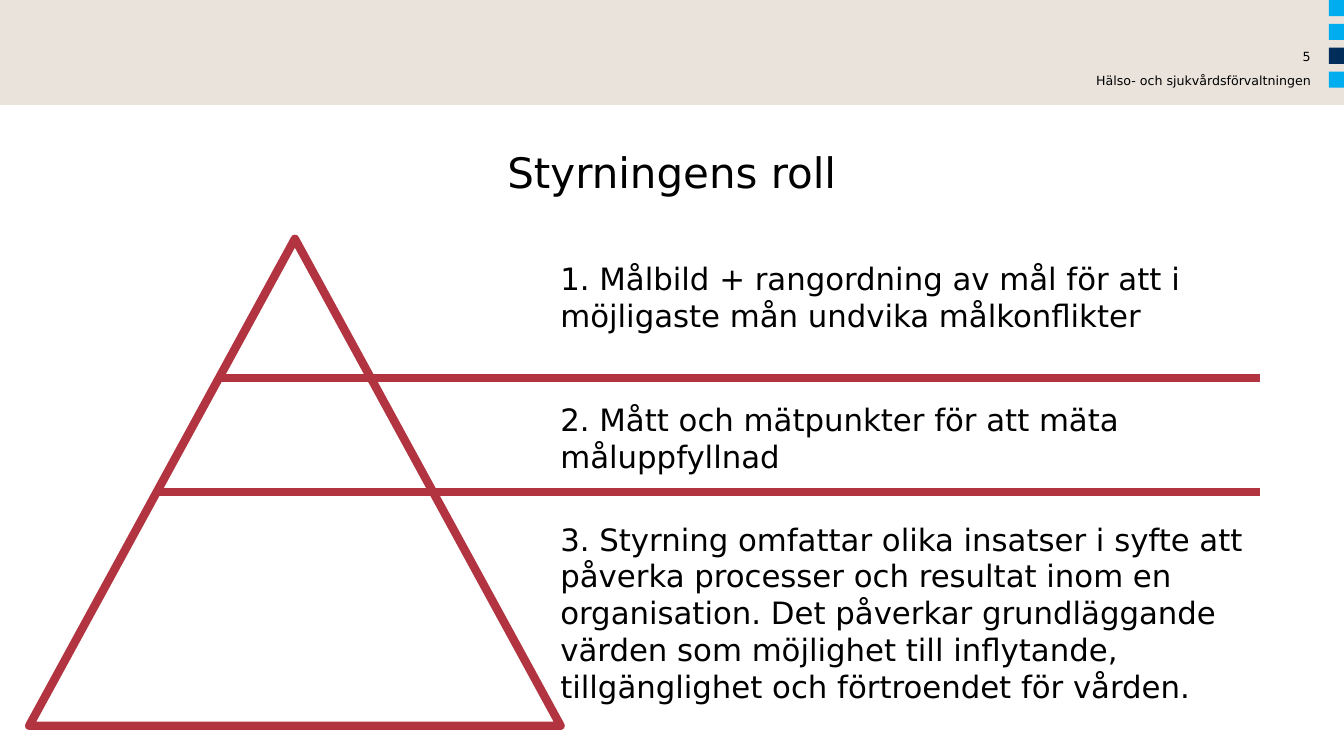
from pptx import Presentation
from pptx.dml.color import RGBColor
from pptx.enum.shapes import MSO_CONNECTOR, MSO_SHAPE
from pptx.enum.text import PP_ALIGN
from pptx.oxml.ns import qn
from pptx.util import Inches, Pt
from lxml.etree import SubElement

WIDTH, HEIGHT = 13.33, 7.5
FONT = "DejaVu Sans"
COLORS = {"band": "E9E3DC", "sky": "00AEEF", "navy": "002D5A",
          "red": "B13440", "text": "000000"}
LEVELS = [
    "1. Målbild + rangordning av mål för att i\vmöjligaste mån undvika målkonflikter",
    "2. Mått och mätpunkter för att mäta måluppfyllnad",
    "3. Styrning omfattar olika insatser i syfte att påverka processer och "
    "resultat inom en organisation. Det påverkar grundläggande värden som "
    "möjlighet till inflytande, tillgänglighet och förtroendet för vården.",
]


def color(name):
    return RGBColor.from_string(COLORS[name])


def add_shape(slide, preset, box, fill=None, line=None):
    shape = slide.shapes.add_shape(preset, *map(Inches, box))
    shape.shadow.inherit = False
    if fill:
        shape.fill.solid()
        shape.fill.fore_color.rgb = color(fill)
    else:
        shape.fill.background()
    if line:
        shape.line.color.rgb = color(line)
        shape.line.width = Pt(6)
    else:
        shape.line.fill.background()


def add_text(slide, box, wording, size, align=PP_ALIGN.LEFT, inset=(0, 0)):
    frame = slide.shapes.add_textbox(*map(Inches, box)).text_frame
    side, edge = map(Inches, inset)
    layout = {"word_wrap": True, "margin_left": side, "margin_right": side,
              "margin_top": edge, "margin_bottom": edge}
    for name, value in layout.items():
        setattr(frame, name, value)
    paragraph = frame.paragraphs[0]
    paragraph.text = wording
    paragraph.alignment = align
    for run in paragraph.runs:
        for name, value in {"name": FONT, "size": Pt(size)}.items():
            setattr(run.font, name, value)
        run.font.color.rgb = color("text")


def add_divider(slide, start, end, y):
    divider = slide.shapes.add_connector(
        MSO_CONNECTOR.STRAIGHT, *map(Inches, (start, y, end, y)))
    divider.line.color.rgb = color("red")
    divider.line.width = Pt(6)
    SubElement(divider._element.spPr, qn("a:effectLst"))


def add_header(slide, left, top, width, height):
    # Band with coloured squares along the right edge
    add_shape(slide, MSO_SHAPE.RECTANGLE, (left, top, width, height), "band")
    square, pitch = 0.16, 0.237
    for row, fill in enumerate(["sky", "sky", "navy", "sky"]):
        add_shape(slide, MSO_SHAPE.RECTANGLE,
                  (left + width - square + 0.01, top + row * pitch, square, square), fill)
    # Page number and department
    label_width, gap = 3.67, 0.33
    for row, label in enumerate(["5", "Hälso- och sjukvårdsförvaltningen"]):
        add_text(slide, (left + width - gap - label_width, top + 0.49 + row * 0.23,
                         label_width, 0.14), label, 9, PP_ALIGN.RIGHT)


def add_pyramid(slide, left, top, width, height):
    # Triangle, with dividers that start on its left side
    add_shape(slide, MSO_SHAPE.ISOSCELES_TRIANGLE, (left, top, width, height), line="red")
    for share in (0.286, 0.52):
        start = left + width / 2 * (1 - share) - 0.02
        add_divider(slide, start, 12.5, top + share * height)


def add_levels(slide, left, top, width, height):
    # One text per level, starting at a share of the height
    rows = [(0, 0.12, 0.94), (0.309, 0.12, 0.91), (0.57, 0.43, 1)]
    for wording, (start, tall, wide) in zip(LEVELS, rows):
        add_text(slide, (left, top + start * height, width * wide, tall * height),
                 wording, 22, inset=(0.1, 0.05))


def main():
    deck = Presentation()
    deck.slide_width, deck.slide_height = Inches(WIDTH), Inches(HEIGHT)
    slide = deck.slides.add_slide(deck.slide_layouts[6])
    add_header(slide, 0, 0, WIDTH, 1.04)
    add_text(slide, (0, 1.45, WIDTH, 0.91), "Styrningens roll", 30, PP_ALIGN.CENTER)
    add_pyramid(slide, 0.29, 2.37, 5.27, 4.83)
    add_levels(slide, 5.46, 2.53, 7.7, 4.53)
    deck.save("out.pptx")


if __name__ == "__main__":
    main()
